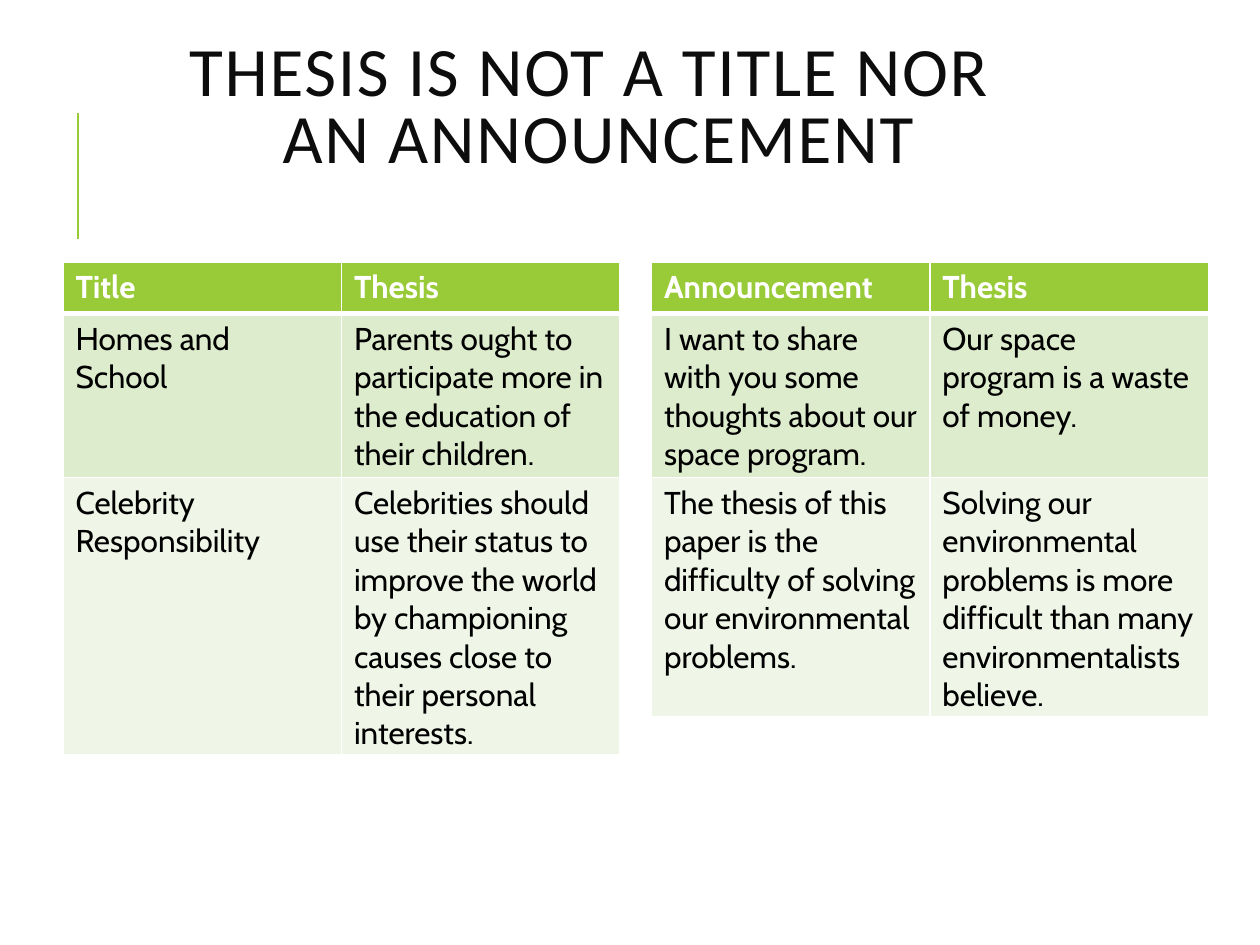
from lxml.etree import SubElement
from pptx import Presentation
from pptx.dml.color import RGBColor
from pptx.enum.shapes import MSO_CONNECTOR
from pptx.enum.text import MSO_ANCHOR, PP_ALIGN
from pptx.oxml import parse_xml
from pptx.oxml.ns import nsdecls, qn
from pptx.util import Inches, Pt

GREEN = "99CB38"
FILLS = [GREEN, "DEECCE", "EFF6E8"]
LEFT, TOP, COL, ROW, STEP = 0.5, 2.08, 2.21, 0.41, 4.67
TABLES = [
    [
        ["Title", "Thesis"],
        ["Homes and School",
         "Parents ought to participate more in the education of their children."],
        ["Celebrity Responsibility",
         "Celebrities should use their status to improve the world by "
         "championing causes close to their personal interests."],
    ],
    [
        ["Announcement", "Thesis"],
        ["I want to share with you some thoughts about our space program.",
         "Our space program is a waste of money."],
        ["The thesis of this paper is the difficulty of solving our "
         "environmental problems.",
         "Solving our environmental problems is more difficult than many "
         "environmentalists believe."],
    ],
]


def color(code):
    """Turn a hex string into a colour."""
    return RGBColor.from_string(code)


def write(frame, text, font="Cabin", size=18, ink="000000", bold=False,
          align=PP_ALIGN.LEFT, lead=1.0, track=0):
    """Write one formatted paragraph, with line breaks at newlines."""
    frame.word_wrap = True
    para = frame.paragraphs[0]
    para.text = text.replace("\n", "\v")
    para.alignment, para.line_spacing = align, lead
    for run in para.runs:
        face = run.font
        face.name, face.size, face.bold = font, Pt(size), bold
        face.color.rgb = color(ink)
        if track:
            face._element.set("spc", str(track * 100))


def edge(cell, sides):
    """Draw white cell borders, given a width in points for each side."""
    props = cell._tc.get_or_add_tcPr()
    for spot, (side, width) in enumerate(sides.items()):
        props.insert(spot, parse_xml(
            f'<a:ln{side} {nsdecls("a")} w="{Pt(width)}"><a:solidFill>'
            f'<a:srgbClr val="FFFFFF"/></a:solidFill></a:ln{side}>'))


def grid(slide, left, rows):
    """Add a table with a green header and tinted rows."""
    count, wide = len(rows), len(rows[0])
    table = slide.shapes.add_table(
        count, wide, Inches(left), Inches(TOP),
        Inches(COL * wide), Inches(ROW * count)).table
    for r, row in enumerate(rows):
        table.rows[r].height = Inches(ROW)
        for c, text in enumerate(row):
            cell, head = table.cell(r, c), r == 0
            cell.fill.solid()
            cell.fill.fore_color.rgb = color(FILLS[r])
            write(cell.text_frame, text, bold=head,
                  ink="FFFFFF" if head else "000000")
            edge(cell, {"L": 1, "R": 1, "T": 3 if r == 1 else 1,
                        "B": 3 if head else 1})


def title(slide, text):
    """Add the centred slide title."""
    box = slide.shapes.add_textbox(
        Inches(0.25), Inches(0.25), Inches(9), Inches(1.25))
    box.text_frame.vertical_anchor = MSO_ANCHOR.MIDDLE
    write(box.text_frame, text, font="Calibri", size=39.6, ink="0D0D0D",
          align=PP_ALIGN.CENTER, lead=0.8, track=1)


def rule(slide, x, top, end):
    """Add the upright green accent line."""
    line = slide.shapes.add_connector(
        MSO_CONNECTOR.STRAIGHT, Inches(x), Inches(end), Inches(x), Inches(top))
    line.line.color.rgb = color(GREEN)
    line.line.width = Pt(1.5)
    SubElement(line._element.spPr, qn("a:effectLst"))


def main():
    """Build and save the slide."""
    deck = Presentation()
    deck.slide_width, deck.slide_height = Inches(10), Inches(7.5)
    slide = deck.slides.add_slide(deck.slide_layouts[6])
    rule(slide, 0.62, 0.9, 1.9)
    title(slide, "THESIS IS NOT A TITLE NOR \nAN ANNOUNCEMENT")
    for i, rows in enumerate(TABLES):
        grid(slide, LEFT + i * STEP, rows)
    deck.save("out.pptx")


if __name__ == "__main__":
    main()
